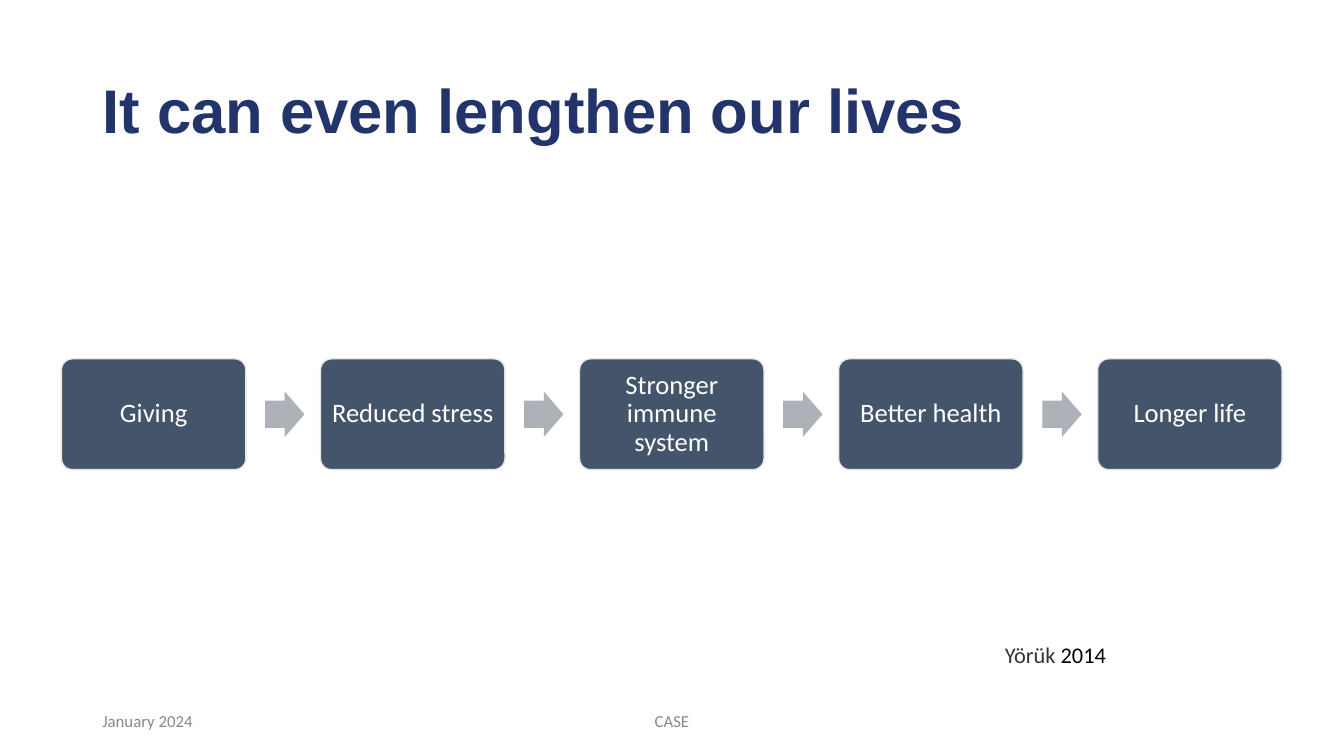
import pptx
import pptx.util
import pptx.dml.color
import pptx.enum.shapes
import pptx.enum.text

Pt = pptx.util.Pt
RGBColor = pptx.dml.color.RGBColor
MSO_SHAPE = pptx.enum.shapes.MSO_SHAPE
PP_ALIGN = pptx.enum.text.PP_ALIGN
MSO_ANCHOR = pptx.enum.text.MSO_ANCHOR

NAVY = RGBColor(0x22, 0x34, 0x69)
SLATE = RGBColor(0x44, 0x54, 0x6A)
OUTLINE = RGBColor(0xE7, 0xE6, 0xE6)
ARROW = RGBColor(0xAE, 0xB2, 0xB8)
WHITE = RGBColor(0xFF, 0xFF, 0xFF)
BLACK = RGBColor(0, 0, 0)
DARK = RGBColor(0x33, 0x33, 0x33)
GRAY = RGBColor(0x88, 0x88, 0x88)

STEPS = ["Giving", "Reduced stress", "Stronger immune system",
         "Better health", "Longer life"]
STEP_LEFT, STEP_TOP, STEP_WIDTH, STEP_HEIGHT = 43.92, 256.32, 131.76, 79.2
STEP_PITCH = 185.04
ARROW_GAP, ARROW_WIDTH, ARROW_HEIGHT = 13.68, 28.08, 32.4


def set_all(obj, values):
    for name, value in values.items():
        setattr(obj, name, value)


def write(sp, runs, size, font="Calibri", bold=False, align=PP_ALIGN.LEFT,
          anchor=MSO_ANCHOR.MIDDLE, spacing=1.0, insets=(7.2, 3.6)):
    tf = sp.text_frame
    across, down = map(Pt, insets)
    set_all(tf, {"word_wrap": True, "vertical_anchor": anchor,
                 "auto_size": pptx.enum.text.MSO_AUTO_SIZE.NONE,
                 "margin_left": across, "margin_right": across,
                 "margin_top": down, "margin_bottom": down})
    p = tf.paragraphs[0]
    set_all(p, {"alignment": align, "line_spacing": spacing})
    for text, color in runs:
        r = p.add_run()
        r.text = text
        set_all(r.font, {"name": font, "size": Pt(size), "bold": bold})
        r.font.color.rgb = color


def add_title(s, text):
    sp = s.shapes.title
    set_all(sp, {"left": Pt(66), "top": Pt(28.8),
                 "width": Pt(828), "height": Pt(104.4)})
    write(sp, [(text, NAVY)], 44, "Arial", True, spacing=0.9)


def add_text(s, box, runs, size, **layout):
    sp = s.shapes.add_textbox(*map(Pt, box))
    write(sp, runs, size, **layout)


def add_block(s, kind, box, fill, adjustments):
    sp = s.shapes.add_shape(kind, *map(Pt, box))
    sp.shadow.inherit = False
    sp.fill.solid()
    sp.fill.fore_color.rgb = fill
    sp.line.fill.background()
    for i, value in enumerate(adjustments):
        sp.adjustments[i] = value
    return sp


def add_step(s, left, text):
    sp = add_block(s, MSO_SHAPE.ROUNDED_RECTANGLE,
                   (left, STEP_TOP, STEP_WIDTH, STEP_HEIGHT), SLATE, [0.1])
    sp.line.color.rgb = OUTLINE
    sp.line.width = Pt(1)
    write(sp, [(text, WHITE)], 19, align=PP_ALIGN.CENTER, spacing=0.9,
          insets=(5.5, 5.5))


def add_arrow(s, step_left):
    left = step_left + STEP_WIDTH + ARROW_GAP
    top = STEP_TOP + (STEP_HEIGHT - ARROW_HEIGHT) / 2
    add_block(s, MSO_SHAPE.RIGHT_ARROW,
              (left, top, ARROW_WIDTH, ARROW_HEIGHT), ARROW, [0.6, 0.5])


def main():
    prs = pptx.Presentation()
    set_all(prs, {"slide_width": Pt(960), "slide_height": Pt(540)})
    s = prs.slides.add_slide(prs.slide_layouts[5])
    add_title(s, "It can even lengthen our lives")
    for i, text in enumerate(STEPS):
        left = STEP_LEFT + i * STEP_PITCH
        add_step(s, left, text)
        if i < len(STEPS) - 1:
            add_arrow(s, left)
    add_text(s, (717.84, 457.92, 219.6, 19.44),
             [("Yörük", DARK), (" 2014", BLACK)], 16,
             anchor=MSO_ANCHOR.TOP, insets=(0, 0))
    add_text(s, (66, 500.4, 216, 28.8), [("January 2024", GRAY)], 12)
    add_text(s, (318, 500.4, 324, 28.8), [("CASE", GRAY)], 12,
             align=PP_ALIGN.CENTER)
    prs.save("out.pptx")


if __name__ == "__main__":
    main()
